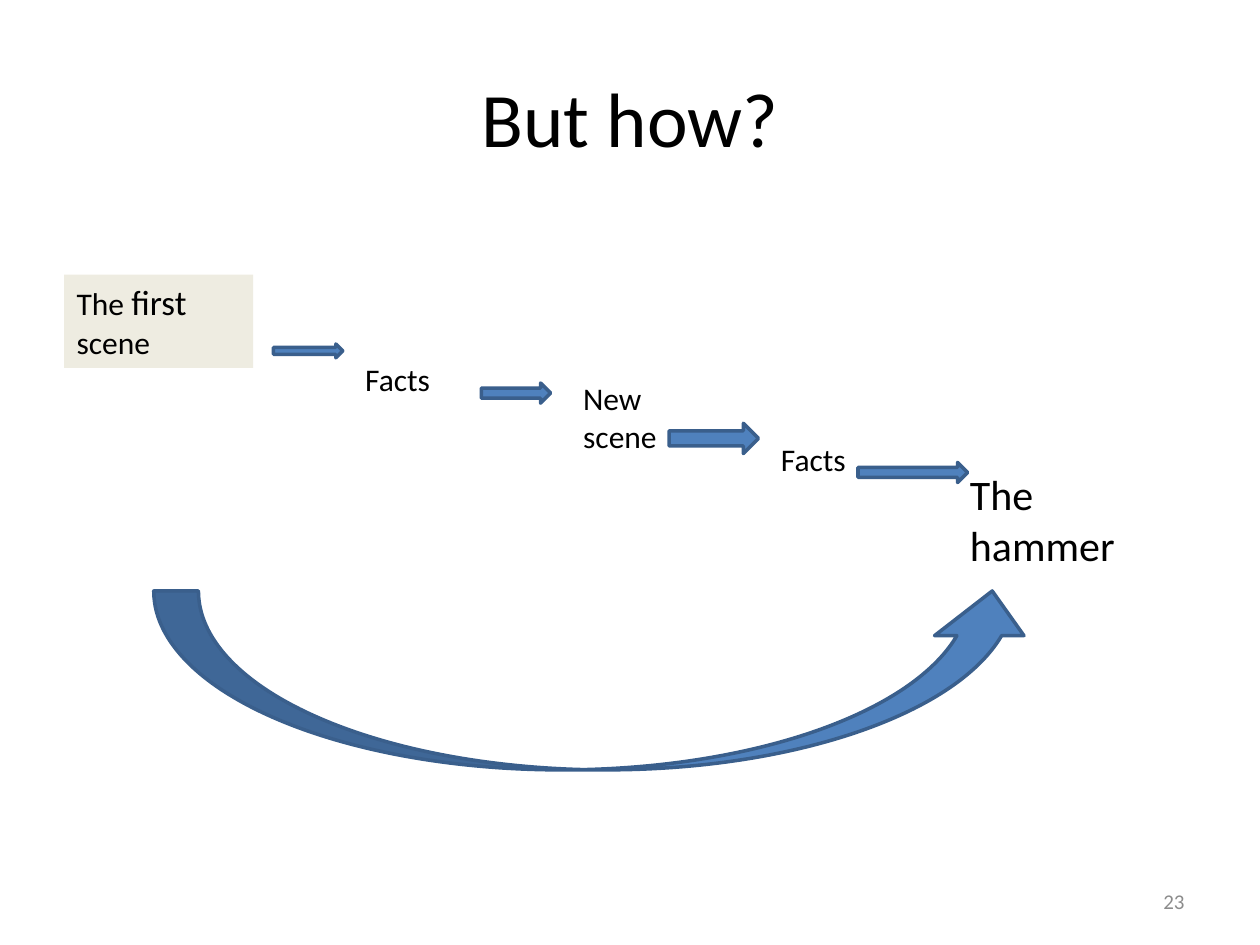
import pptx
import pptx.dml.color
import pptx.enum.shapes
import pptx.enum.text
import pptx.util
from pptx.util import Inches

ALIGN = pptx.enum.text.PP_ALIGN
ANCHOR = pptx.enum.text.MSO_ANCHOR
SHAPE = pptx.enum.shapes.MSO_SHAPE

FONT = "Calibri"
BLACK, GRAY, BEIGE = "000000", "8C8C8C", "EEECE1"
ARROW_FILL, ARROW_LINE = "4F81BD", "3A5F8C"


def color(hex_value):
    return pptx.dml.color.RGBColor.from_string(hex_value)


def add_text(slide, box, runs, text_color=BLACK, align=ALIGN.LEFT, anchor=ANCHOR.TOP):
    """Add a text box; runs holds (text, size in points) pairs."""
    shape = slide.shapes.add_textbox(*map(Inches, box))
    frame = shape.text_frame
    frame.word_wrap = True
    frame.vertical_anchor = anchor
    paragraph = frame.paragraphs[0]
    paragraph.alignment = align
    for text, size in runs:
        run = paragraph.add_run()
        run.text = text
        run.font.name = FONT
        run.font.size = pptx.util.Pt(size)
        run.font.color.rgb = color(text_color)
    return shape


def add_arrow(slide, box, preset=SHAPE.RIGHT_ARROW):
    arrow = slide.shapes.add_shape(preset, *map(Inches, box))
    arrow.shadow.inherit = False
    arrow.fill.solid()
    arrow.fill.fore_color.rgb = color(ARROW_FILL)
    arrow.line.color.rgb = color(ARROW_LINE)
    arrow.line.width = pptx.util.Pt(2)


def add_title(slide, box):
    add_text(slide, box, [("But how?", 44)], align=ALIGN.CENTER, anchor=ANCHOR.MIDDLE)


def add_page_number(slide, box):
    add_text(slide, box, [("23", 12)], GRAY, ALIGN.RIGHT, ANCHOR.MIDDLE)


def add_scene_chain(slide, box):
    """Step from the first scene down to the hammer, with an arrow after each step."""
    left, top, width, height = box
    steps = [
        ((0, 0, 1.5, 0.74), [("The ", 18), ("first", 20), (" scene", 18)]),
        ((2.29, 0.63, 1.42, 0.4), [("Facts", 18)]),
        ((4.02, 0.78, 1.18, 0.71), [("New scene", 18)]),
        ((5.59, 1.26, 0.87, 0.4), [("Facts", 18)]),
        ((width - 1.57, height - 0.91, 1.57, 0.91), [("The hammer", 24)]),
    ]
    arrows = [
        (1.66, 0.55, 0.55, 0.11),
        (3.31, 0.86, 0.55, 0.16),
        (4.8, 1.18, 0.71, 0.24),
        (6.3, 1.49, 0.87, 0.16),
    ]

    def placed(part):
        return (left + part[0], top + part[1], *part[2:])

    labels = [add_text(slide, placed(part), runs) for part, runs in steps]
    labels[0].fill.solid()
    labels[0].fill.fore_color.rgb = color(BEIGE)
    for part in arrows:
        add_arrow(slide, placed(part))


def main():
    presentation = pptx.Presentation()
    presentation.slide_width = Inches(10)
    presentation.slide_height = Inches(7.5)
    slide = presentation.slides.add_slide(presentation.slide_layouts[6])

    add_title(slide, (0.5, 0.3, 9, 1.25))
    add_page_number(slide, (7.17, 6.95, 2.33, 0.4))
    add_scene_chain(slide, (0.51, 2.18, 8.66, 2.4))
    add_arrow(slide, (1.22, 4.69, 7.01, 1.42), SHAPE.CURVED_UP_ARROW)

    presentation.save("out.pptx")


if __name__ == "__main__":
    main()
